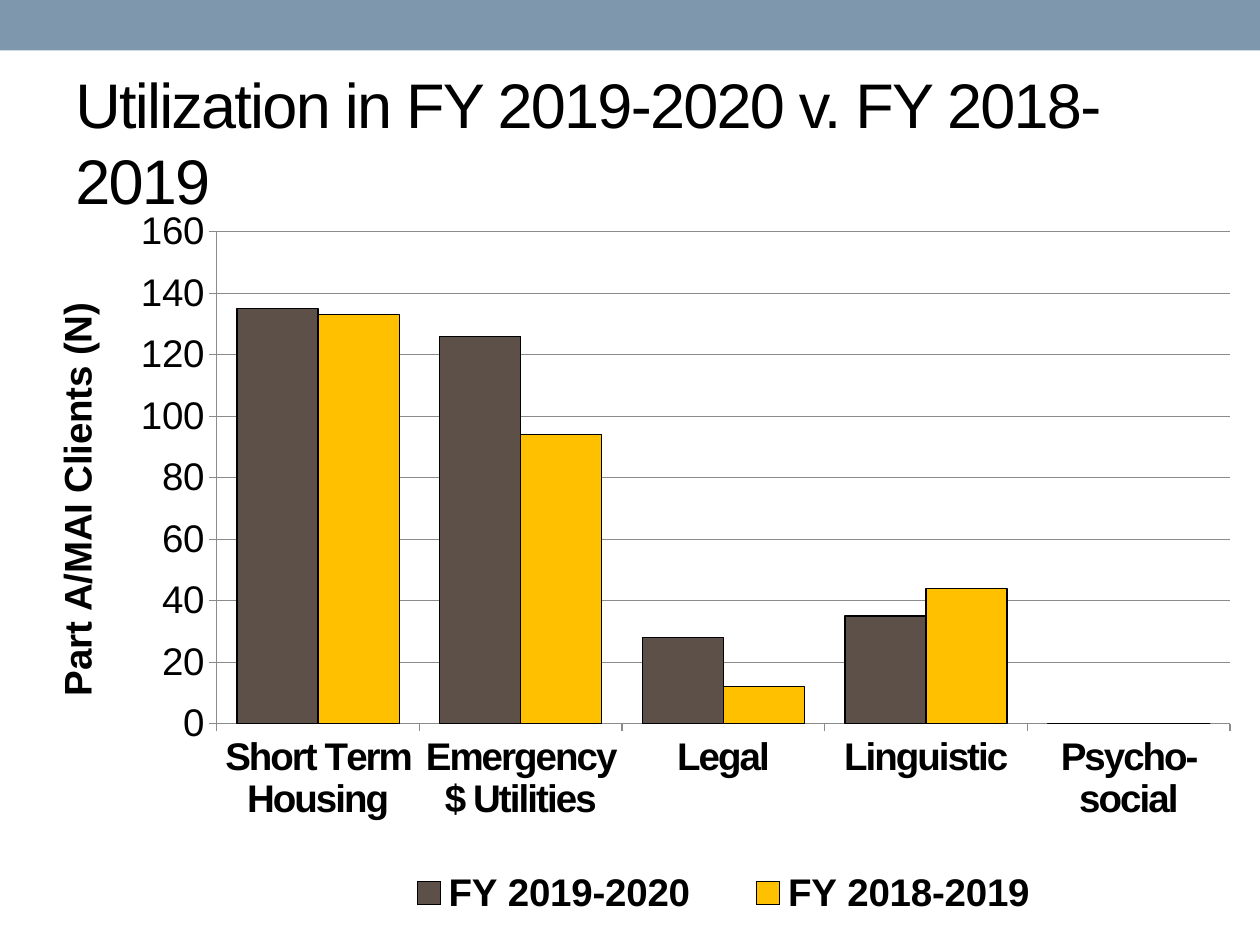
import pptx
import pptx.chart.data
import pptx.dml.color
import pptx.enum.chart
import pptx.enum.shapes
import pptx.enum.text
import pptx.oxml
import pptx.oxml.ns
import pptx.util
from pptx.util import Inches, Pt

COLORS = {
    "band": "7E97AD",
    "text": "000000",
    "axis": "8B8B8B",
    "FY 2019-2020": "5C5048",
    "FY 2018-2019": "FFC000",
}
CLIENTS = {
    "FY 2019-2020": (135, 126, 28, 35, 0),
    "FY 2018-2019": (133, 94, 12, 44, 0),
}
SERVICES = ["Short Term Housing", "Emergency $ Utilities", "Legal",
            "Linguistic", "Psycho- social"]


def color(name):
    return pptx.dml.color.RGBColor.from_string(COLORS[name])


def set_layout(element, position, **fractions):
    """Place a chart part by hand, in fractions of the chart's size."""
    for old in element.findall(pptx.oxml.ns.qn("c:layout")):
        element.remove(old)
    target = '<c:layoutTarget val="inner"/>' if "w" in fractions and position == 0 else ""
    modes = "".join(f'<c:{key}Mode val="edge"/>' for key in fractions if key in "xy")
    values = "".join(f'<c:{key} val="{value}"/>' for key, value in fractions.items())
    element.insert(position, pptx.oxml.parse_xml(
        f'<c:layout {pptx.oxml.ns.nsdecls("c")}><c:manualLayout>'
        f"{target}{modes}{values}</c:manualLayout></c:layout>"))


presentation = pptx.Presentation()
presentation.slide_width = Inches(10)
presentation.slide_height = Inches(7.5)
slide = presentation.slides.add_slide(presentation.slide_layouts[6])

# Top band
band = slide.shapes.add_shape(pptx.enum.shapes.MSO_SHAPE.RECTANGLE,
                              0, 0, Inches(10), Inches(0.4))
band.shadow.inherit = False
band.fill.solid()
band.fill.fore_color.rgb = color("band")
band.line.fill.background()

# Title
title = slide.shapes.add_textbox(Inches(0.5), Inches(0.58), Inches(9), Inches(1.08))
title.text_frame.word_wrap = True
title.text_frame.vertical_anchor = pptx.enum.text.MSO_ANCHOR.MIDDLE
paragraph = title.text_frame.paragraphs[0]
run = paragraph.add_run()
run.text = "Utilization in FY 2019-2020 v. FY 2018-2019"
paragraph.font.size = Pt(36)
paragraph.font.name = "Arial"
paragraph.font.color.rgb = color("text")
run.font._element.set("spc", "-100")

# Chart
data = pptx.chart.data.CategoryChartData(number_format="#,##0")
data.categories = SERVICES
for year, values in CLIENTS.items():
    data.add_series(year, values)
chart = slide.shapes.add_chart(
    pptx.enum.chart.XL_CHART_TYPE.COLUMN_CLUSTERED,
    Inches(0.17), Inches(1.67), Inches(9.69), Inches(5.66), data).chart
chart.has_title = False
chart.font.size = Pt(22)
chart.font.name = "Arial"
chart.font.color.rgb = color("text")
set_layout(chart._chartSpace.chart.plotArea, 0, x=0.16, y=0.03, w=0.83, h=0.69)

plot = chart.plots[0]
plot.gap_width = 50
plot.overlap = 0
plot.vary_by_categories = False
for series in plot.series:
    series.format.fill.solid()
    series.format.fill.fore_color.rgb = color(series.name)
    series.format.line.color.rgb = color("text")
    series.format.line.width = Pt(0.75)

# Axes
category_axis, value_axis = chart.category_axis, chart.value_axis
for axis in (category_axis, value_axis):
    axis.major_tick_mark = pptx.enum.chart.XL_TICK_MARK.OUTSIDE
    axis.minor_tick_mark = pptx.enum.chart.XL_TICK_MARK.NONE
    axis.format.line.color.rgb = color("axis")
    axis.tick_labels.font.size = Pt(22)
category_axis.tick_labels.font.bold = True
category_axis.tick_labels.font._element.set("spc", "-100")
value_axis.minimum_scale = 0
value_axis.maximum_scale = 160
value_axis.major_unit = 20
value_axis.tick_labels.number_format = "#,##0"
value_axis.tick_labels.number_format_is_linked = False
value_axis.has_major_gridlines = True
value_axis.major_gridlines.format.line.color.rgb = color("axis")

axis_title = value_axis.axis_title
axis_title.text_frame.text = "Part A/MAI Clients (N)"
axis_title.text_frame._txBody.bodyPr.set("rot", "-5400000")
axis_title.text_frame.paragraphs[0].font.bold = True
axis_title.text_frame.paragraphs[0].font.size = Pt(22)
set_layout(axis_title._element, 1, x=0.02, y=0.12)

# Legend
chart.has_legend = True
chart.legend.position = pptx.enum.chart.XL_LEGEND_POSITION.BOTTOM
chart.legend.include_in_layout = False
chart.legend.font.bold = True
chart.legend.font.size = Pt(22)
set_layout(chart.legend._element, 1, x=0.28, y=0.92, w=0.59, h=0.08)

presentation.save("out.pptx")
